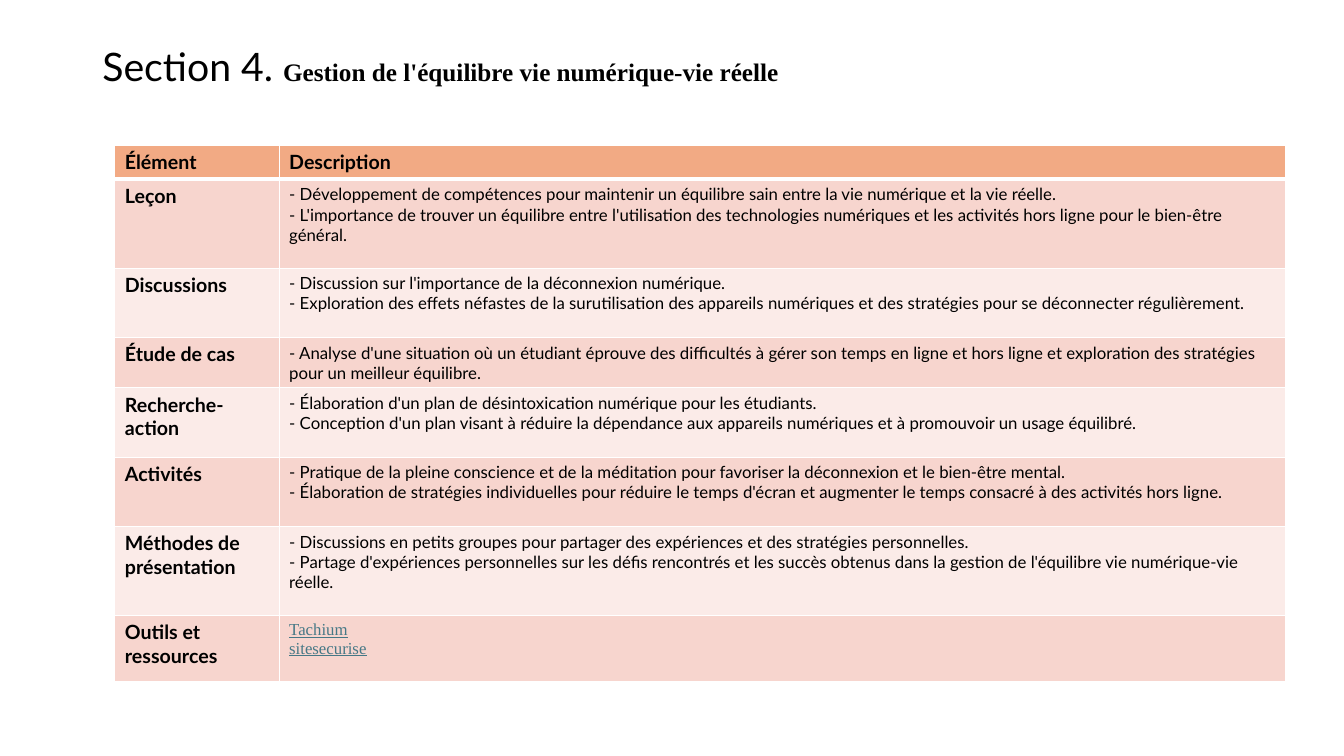
from pptx import Presentation
from pptx.dml.color import RGBColor
from pptx.enum.text import MSO_ANCHOR, PP_ALIGN
from pptx.oxml import parse_xml
from pptx.oxml.ns import nsdecls
from pptx.util import Pt

BLACK = RGBColor(0x00, 0x00, 0x00)
LINK = RGBColor(0x46, 0x78, 0x86)
WHITE = RGBColor(0xFF, 0xFF, 0xFF)
HEADER = RGBColor(0xF2, 0xAA, 0x84)
BANDS = [RGBColor(0xFB, 0xEB, 0xE8), RGBColor(0xF7, 0xD5, 0xCE)]
SANS = "Lato"
SERIF = "Times New Roman"

ROWS = [
    (24, "Élément", ["Description"]),
    (63.5, "Leçon", [
        "- Développement de compétences pour maintenir un équilibre sain entre la vie numérique et la vie réelle.",
        "- L'importance de trouver un équilibre entre l'utilisation des technologies numériques et les activités hors ligne pour le bien-être général."]),
    (49.5, "Discussions", [
        "- Discussion sur l'importance de la déconnexion numérique.",
        "- Exploration des effets néfastes de la surutilisation des appareils numériques et des stratégies pour se déconnecter régulièrement."]),
    (36, "Étude de cas", [
        "- Analyse d'une situation où un étudiant éprouve des difficultés à gérer son temps en ligne et hors ligne et exploration des stratégies pour un meilleur équilibre."]),
    (49.5, "Recherche-action", [
        "- Élaboration d'un plan de désintoxication numérique pour les étudiants.",
        "- Conception d'un plan visant à réduire la dépendance aux appareils numériques et à promouvoir un usage équilibré."]),
    (49.5, "Activités", [
        "- Pratique de la pleine conscience et de la méditation pour favoriser la déconnexion et le bien-être mental.",
        "- Élaboration de stratégies individuelles pour réduire le temps d'écran et augmenter le temps consacré à des activités hors ligne."]),
    (63.5, "Méthodes de présentation", [
        "- Discussions en petits groupes pour partager des expériences et des stratégies personnelles.",
        "- Partage d'expériences personnelles sur les défis rencontrés et les succès obtenus dans la gestion de l'équilibre vie numérique-vie réelle."]),
    (47.5, "Outils et ressources", ["Tachium", "sitesecurise"]),
]


def add_text(p, text, size=14, font=SANS, color=BLACK, bold=False, underline=False):
    r = p.add_run()
    r.text = text
    r.font.size = Pt(size)
    r.font.name = font
    r.font.color.rgb = color
    r.font.bold = bold
    r.font.underline = underline


def set_borders(cell, bottom):
    tcPr = cell._tc.get_or_add_tcPr()
    for side, width in (("L", 1), ("R", 1), ("T", 1), ("B", bottom)):
        tcPr.append(parse_xml(
            f'<a:ln{side} {nsdecls("a")} w="{Pt(width)}"><a:solidFill>'
            f'<a:srgbClr val="{WHITE}"/></a:solidFill></a:ln{side}>'))


prs = Presentation()
prs.slide_width, prs.slide_height = Pt(960), Pt(540)
s = prs.slides.add_slide(prs.slide_layouts[5])

title = s.shapes.title
title.left, title.top, title.width, title.height = Pt(66), Pt(10.8), Pt(828), Pt(76.3)
tf = title.text_frame
tf.word_wrap = True
tf.vertical_anchor = MSO_ANCHOR.MIDDLE
p = tf.paragraphs[0]
p.alignment = PP_ALIGN.LEFT
p.line_spacing = 0.9
add_text(p, "Section 4. ", size=28)
add_text(p, "Gestion de l'équilibre vie numérique-vie réelle", size=18, font=SERIF, bold=True)

height = sum(row[0] for row in ROWS)
table = s.shapes.add_table(len(ROWS), 2, Pt(82), Pt(104), Pt(836), Pt(height)).table
table.horz_banding = False
table.columns[0].width = Pt(117.4)
table.columns[1].width = Pt(718.6)

for i, (row_height, label, lines) in enumerate(ROWS):
    table.rows[i].height = Pt(row_height)
    if i == 0:
        style = {"bold": True}
    elif i == len(ROWS) - 1:
        style = {"size": 12, "font": SERIF, "color": LINK, "underline": True}
    else:
        style = {"size": 12}
    for j, (texts, fmt) in enumerate([([label], {"bold": True}), (lines, style)]):
        cell = table.cell(i, j)
        set_borders(cell, 3 if i == 0 else 1)
        cell.fill.solid()
        cell.fill.fore_color.rgb = HEADER if i == 0 else BANDS[i % 2]
        tf = cell.text_frame
        for k, text in enumerate(texts):
            p = tf.paragraphs[0] if k == 0 else tf.add_paragraph()
            add_text(p, text, **fmt)

prs.save("out.pptx")
